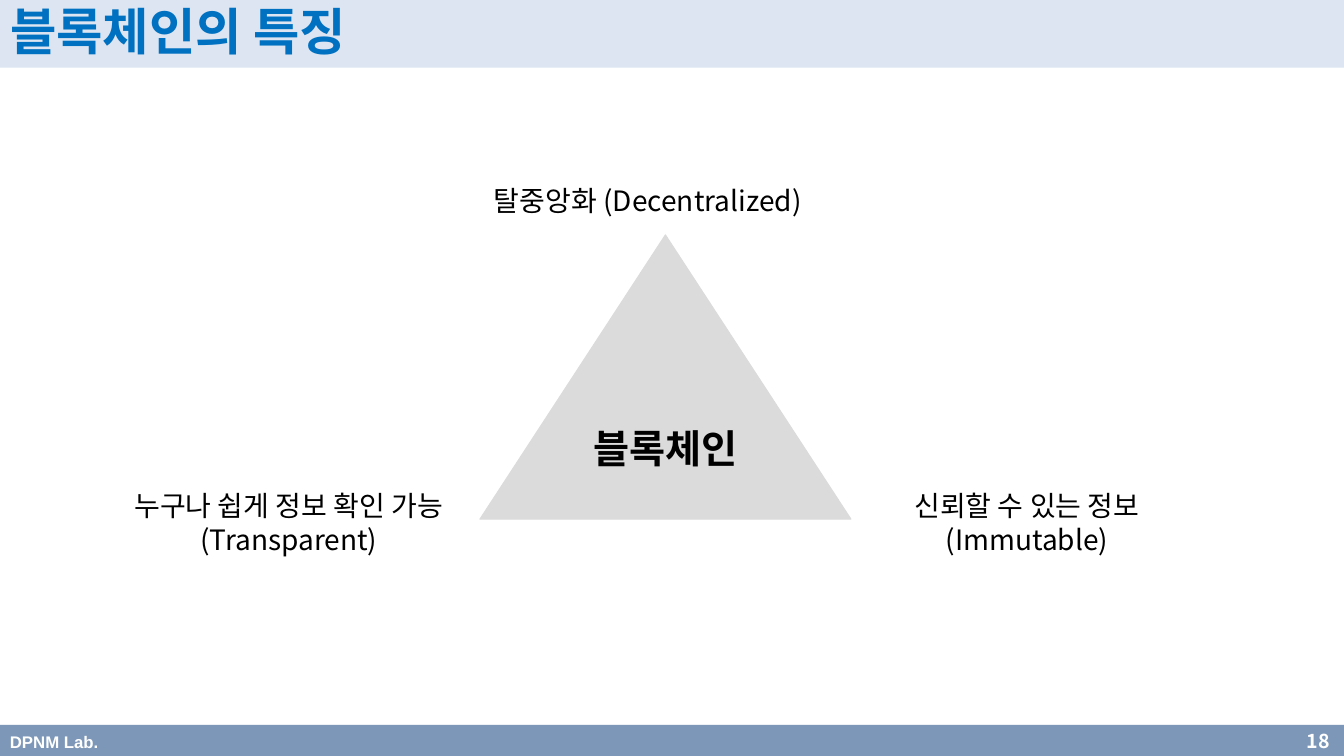
from lxml import etree
from pptx import Presentation
from pptx.dml.color import RGBColor
from pptx.enum import shapes, text
from pptx.oxml import ns
from pptx.util import Inches, Pt

BLACK = RGBColor(0, 0, 0)
WHITE = RGBColor(255, 255, 255)
BLUE = RGBColor(0x00, 0x70, 0xC0)
PALE = RGBColor(0x95, 0xB3, 0xD7)
NAVY = RGBColor(0x37, 0x60, 0x92)
GRAY = RGBColor(0xDB, 0xDB, 0xDB)
SANS = "Noto Sans CJK KR"
LEFT, MID = text.PP_ALIGN.LEFT, text.PP_ALIGN.CENTER

WIDE, HIGH = 13.33, 7.5
TITLE = "블록체인의 특징"
CORE = "블록체인"
LAB, PAGE = "DPNM Lab.", "18"
TRAITS = [
    (["탈중앙화 (Decentralized)"], (4.8, 1.77, 3.59, 0.44), LEFT),
    (["누구나 쉽게 정보 확인 가능", "(Transparent)"], (0.98, 4.8, 3.77, 0.77), MID),
    (["신뢰할 수 있는 정보(Immutable)"], (8.39, 4.8, 3.59, 0.77), MID),
]


def add(parent, name, **attrs):
    return etree.SubElement(parent, ns.qn(name), attrs)


def write(para, words, size=20, face=SANS, color=BLACK, bold=False, align=LEFT):
    para.alignment = align
    run = para.add_run()
    run.text = words
    font = run.font
    font.size, font.name, font.bold = Pt(size), face, bold
    font.color.rgb = color
    add(font._element, "a:ea", typeface=SANS)


def paint(shape, color, alpha=100):
    shape.fill.solid()
    shape.fill.fore_color.rgb = color
    if alpha < 100:
        tint = shape._element.spPr.find(".//" + ns.qn("a:srgbClr"))
        add(tint, "a:alpha", val=str(alpha * 1000))
    frame = shape.text_frame
    frame.word_wrap = True
    frame.vertical_anchor = text.MSO_ANCHOR.MIDDLE
    return frame.paragraphs[0]


def draw(slide, kind, box):
    shape = slide.shapes.add_shape(kind, *map(Inches, box))
    shape.shadow.inherit = False
    shape.line.fill.background()
    return shape


def main():
    deck = Presentation()
    deck.slide_width, deck.slide_height = Inches(WIDE), Inches(HIGH)
    slide = deck.slides.add_slide(deck.slide_layouts[5])

    title = slide.shapes.title
    title.left, title.top = 0, 0
    title.width, title.height = Inches(WIDE), Inches(0.67)
    para = paint(title, PALE, 33)
    title.text_frame.auto_size = text.MSO_AUTO_SIZE.NONE
    para.line_spacing = 0.9
    write(para, TITLE, size=36, face="Arial", color=BLUE, bold=True)

    foot = draw(slide, shapes.MSO_SHAPE.RECTANGLE, (0, 7.19, WIDE, 0.31))
    para = paint(foot, NAVY, 65)
    tabs = add(para._p.get_or_add_pPr(), "a:tabLst")
    add(tabs, "a:tab", pos=str(Inches(13.09)), algn="r")
    write(para, LAB + "\t", size=12, face="Arial", color=WHITE, bold=True)
    write(para, PAGE, size=14, color=WHITE, bold=True)

    core = draw(slide, shapes.MSO_SHAPE.ISOSCELES_TRIANGLE, (4.76, 2.33, 3.68, 2.82))
    para = paint(core, GRAY)
    core.line.color.rgb = GRAY
    core.line.width = Pt(0.75)
    write(para, CORE, size=28, face="Arial", bold=True, align=MID)

    for lines, box, align in TRAITS:
        frame = slide.shapes.add_textbox(*map(Inches, box)).text_frame
        frame.word_wrap = True
        for i, line in enumerate(lines):
            para = frame.add_paragraph() if i else frame.paragraphs[0]
            write(para, line, align=align)

    deck.save("out.pptx")


if __name__ == "__main__":
    main()
